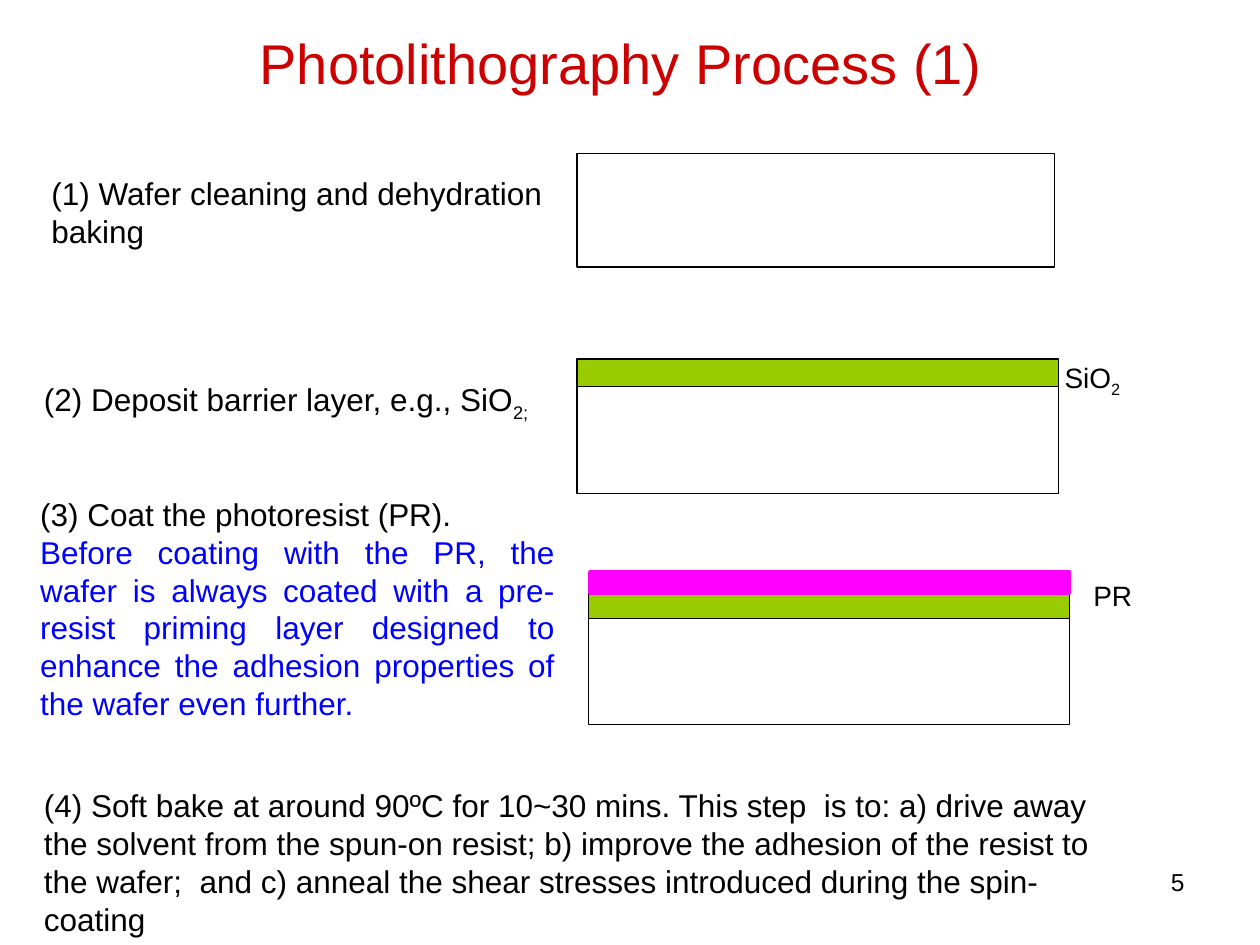
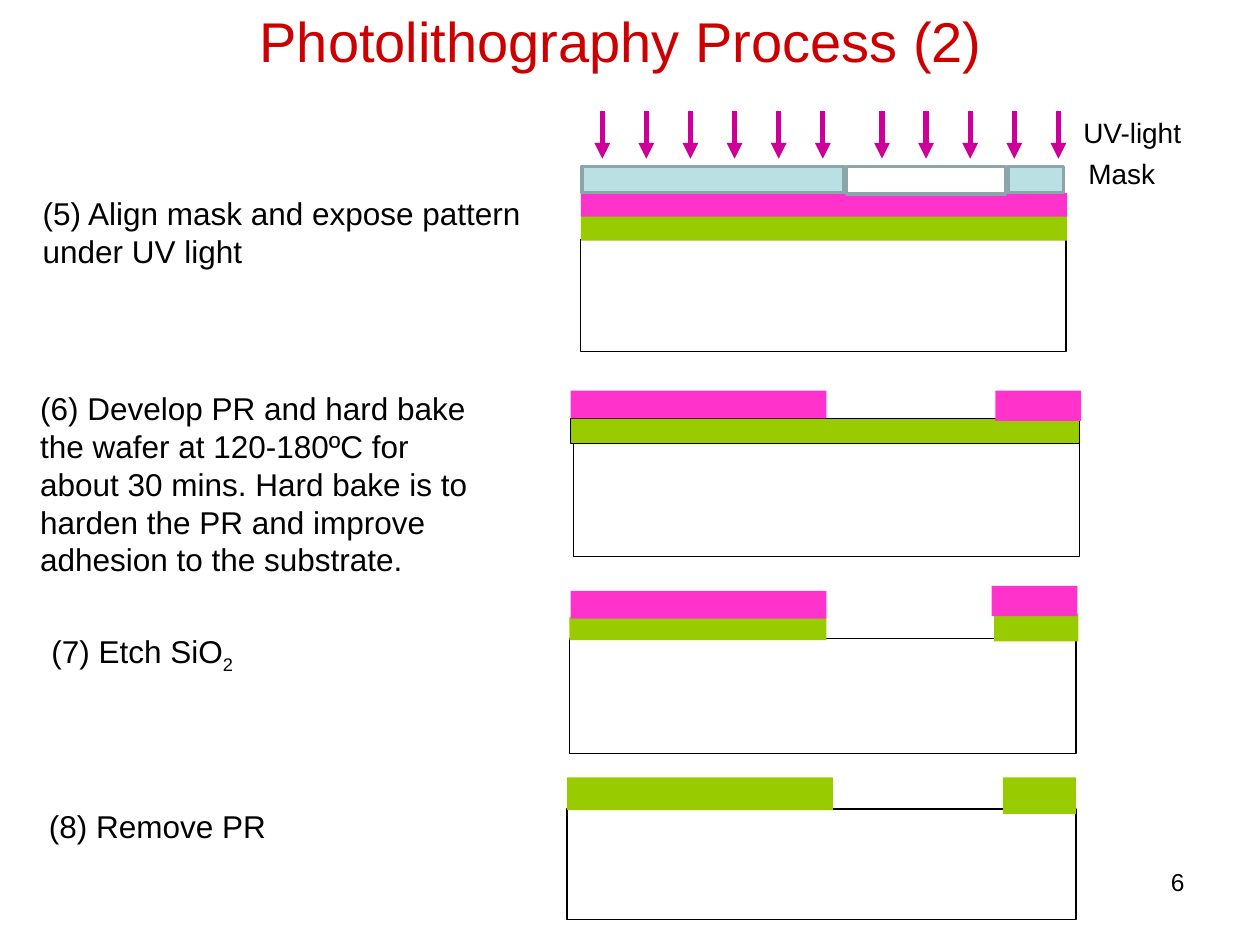
from lxml.etree import SubElement
from pptx import Presentation
from pptx.dml.color import RGBColor
from pptx.enum.shapes import MSO_CONNECTOR, MSO_SHAPE
from pptx.enum.text import MSO_ANCHOR, MSO_AUTO_SIZE, PP_ALIGN as ALIGN
from pptx.oxml.ns import qn
from pptx.util import Inches, Pt

FONT = "Arial"
BLACK = RGBColor(0x00, 0x00, 0x00)
TITLE_RED = RGBColor(0xCC, 0x00, 0x00)
NOTE_BLUE = RGBColor(0x00, 0x00, 0xFF)
OXIDE_GREEN = RGBColor(0x99, 0xCC, 0x00)
COATED_RESIST = RGBColor(0xFF, 0x00, 0xFF)
EXPOSED_RESIST = RGBColor(0xFF, 0x33, 0xCC)
MASK_BLUE = RGBColor(0xBB, 0xE0, 0xE3)
MASK_EDGE = RGBColor(0x8A, 0xA6, 0xA8)
UV_PURPLE = RGBColor(0xCC, 0x00, 0x99)

presentation = Presentation()
presentation.slide_width = Inches(10)
presentation.slide_height = Inches(7.5)
COLUMN = presentation.slide_width / 100
ROW = presentation.slide_height / 75

STEP_SIZE, LABEL_SIZE, NUMBER_SIZE, TITLE_SIZE = 18, 16, 14, 32
THIN = (BLACK, 0.75)
RESIST_EDGE = (COATED_RESIST, 2)
MASK_LINE = (MASK_EDGE, 2)


def grid(left, top, width, height):
    """Turn columns and rows into slide lengths."""
    return (round(left * COLUMN), round(top * ROW),
            round(width * COLUMN), round(height * ROW))


def write(paragraph, text, size, color=BLACK, align=ALIGN.LEFT):
    """Add text run by run; what follows a bar is set as a subscript."""
    paragraph.alignment = align
    for position, part in enumerate(text.split("|")):
        run = paragraph.add_run()
        run.text = part
        run.font.name = FONT
        run.font.size = Pt(size)
        run.font.color.rgb = color
        if position:
            run._r.get_or_add_rPr().set("baseline", "-25000")


# Texts: grid place, size, paragraphs. Layers: grid place, fill, line.
pages = [
    {
        "number": "5",
        "title": "Photolithography Process (1)",
        "title_place": (7.2, 1.8, 84.2, 6.4),
        "texts": [
            ((3.1, 13.3, 41, 7.1), STEP_SIZE,
             ["(1) Wafer cleaning and dehydration baking"]),
            ((2.5, 29.7, 41.4, 4), STEP_SIZE,
             ["(2) Deposit barrier layer, e.g., SiO|2;"]),
            ((2.2, 38.8, 42.8, 19.2), STEP_SIZE,
             ["(3) Coat the photoresist (PR).",
              "Before coating with the PR, the wafer is always coated with a "
              "pre-resist priming layer designed to enhance the adhesion "
              "properties of the wafer even further."]),
            ((2.5, 61.9, 87.9, 13.1), STEP_SIZE,
             ["(4) Soft bake at around 90ºC for 10~30 mins. This step  is to: "
              "a) drive away the solvent from the spun-on resist; b) improve "
              "the adhesion of the resist to the wafer;  and c) anneal the "
              "shear stresses introduced during the spin-coating"]),
            ((83.5, 28.1, 10.8, 3.7), LABEL_SIZE, ["SiO|2"]),
            ((85.8, 45.4, 6.7, 3.7), LABEL_SIZE, ["PR"]),
        ],
        "layers": [
            # cleaned wafer
            ((45.8, 12.2, 37.9, 9), None, THIN),
            # barrier layer
            ((45.8, 30.6, 38.2, 8.6), None, THIN),
            ((45.8, 28.5, 38.2, 2.2), OXIDE_GREEN, THIN),
            # coated resist
            ((46.7, 49, 38.2, 8.5), None, THIN),
            ((46.7, 47.2, 38.2, 1.9), OXIDE_GREEN, THIN),
            ((46.8, 45.4, 38.1, 1.7), COATED_RESIST, RESIST_EDGE),
        ],
        "uv_columns": [],
    },
    {
        "number": "6",
        "title": "Photolithography Process (2)",
        "title_place": (7.2, 0, 84.2, 6.4),
        "texts": [
            ((2.4, 14.9, 42.2, 7.1), STEP_SIZE,
             ["(5) Align mask and expose pattern under UV light"]),
            ((2.2, 30.4, 37.5, 16.2), STEP_SIZE,
             ["(6) Develop PR and hard bake the wafer at 120-180ºC for about "
              "30 mins. Hard bake is to harden the PR and improve adhesion "
              "to the substrate."]),
            ((3.1, 49.7, 37.5, 4), STEP_SIZE, ["(7) Etch SiO|2"]),
            ((2.9, 63.6, 37.5, 4), STEP_SIZE, ["(8) Remove PR"]),
            ((85, 8.7, 15, 3.7), LABEL_SIZE, ["UV-light"]),
            ((85.4, 11.9, 10.7, 3.7), LABEL_SIZE, ["Mask"]),
        ],
        "layers": [
            # exposure through the mask
            ((46.1, 19, 38.5, 8.9), None, THIN),
            ((46.1, 16.9, 38.6, 2.2), OXIDE_GREEN, None),
            ((46.1, 15.3, 38.6, 1.9), EXPOSED_RESIST, None),
            ((46.2, 13.2, 20.8, 2.1), MASK_BLUE, MASK_LINE),
            ((80, 13.2, 4.4, 2.1), MASK_BLUE, MASK_LINE),
            ((67.2, 13.2, 12.6, 2.2), None, MASK_LINE),
            # developed resist
            ((45.5, 35.1, 40.2, 9.1), None, THIN),
            ((45.3, 33.2, 40.4, 2), OXIDE_GREEN, THIN),
            ((45.3, 31, 20.3, 2.2), EXPOSED_RESIST, None),
            ((79, 31, 6.8, 2.4), EXPOSED_RESIST, None),
            # etched oxide
            ((45.2, 50.7, 40.2, 9.1), None, THIN),
            ((45.2, 49, 20.4, 1.8), OXIDE_GREEN, None),
            ((78.9, 48.7, 6.7, 2.2), OXIDE_GREEN, None),
            ((45.3, 46.9, 20.3, 2.2), EXPOSED_RESIST, None),
            ((78.7, 46.5, 6.8, 2.4), EXPOSED_RESIST, None),
            # resist removed
            ((45, 64.2, 40.4, 8.8), None, THIN),
            ((45, 61.7, 21.1, 2.6), OXIDE_GREEN, None),
            ((79.6, 61.7, 5.8, 2.9), OXIDE_GREEN, None),
        ],
        "uv_columns": [47.8 + 3.5 * step for step in range(6)]
                      + [70 + 3.5 * step for step in range(5)],
    },
]

for page in pages:
    slide = presentation.slides.add_slide(presentation.slide_layouts[5])

    title = slide.shapes.title
    title.left, title.top, title.width, title.height = grid(*page["title_place"])
    title.text_frame.auto_size = MSO_AUTO_SIZE.NONE
    title.text_frame.vertical_anchor = MSO_ANCHOR.TOP
    write(title.text_frame.paragraphs[0], page["title"], TITLE_SIZE,
          TITLE_RED, ALIGN.CENTER)

    number_box = slide.shapes.add_textbox(*grid(71.7, 68.3, 23.3, 5.2))
    write(number_box.text_frame.paragraphs[0], page["number"], NUMBER_SIZE,
          align=ALIGN.RIGHT)
    number_box.text_frame.word_wrap = True

    for place, fill, line in page["layers"]:
        layer = slide.shapes.add_shape(MSO_SHAPE.RECTANGLE, *grid(*place))
        layer.shadow.inherit = False
        if fill is None:
            layer.fill.background()
        else:
            layer.fill.solid()
            layer.fill.fore_color.rgb = fill
        if line is None:
            layer.line.fill.background()
        else:
            line_color, line_width = line
            layer.line.color.rgb = line_color
            layer.line.width = Pt(line_width)

    for column in page["uv_columns"]:
        left, top, _, length = grid(column, 8.8, 0, 3.8)
        arrow = slide.shapes.add_connector(
            MSO_CONNECTOR.STRAIGHT, left, top, left, top + length)
        arrow.line.color.rgb = UV_PURPLE
        arrow.line.width = Pt(3)
        SubElement(arrow.line._get_or_add_ln(), qn("a:tailEnd"), type="triangle")
        SubElement(arrow._element.spPr, qn("a:effectLst"))

    for place, size, lines in page["texts"]:
        text_frame = slide.shapes.add_textbox(*grid(*place)).text_frame
        text_frame.word_wrap = True
        write(text_frame.paragraphs[0], lines[0], size)
        for note in lines[1:]:
            write(text_frame.add_paragraph(), note, size, NOTE_BLUE, ALIGN.JUSTIFY)

presentation.save("out.pptx")
